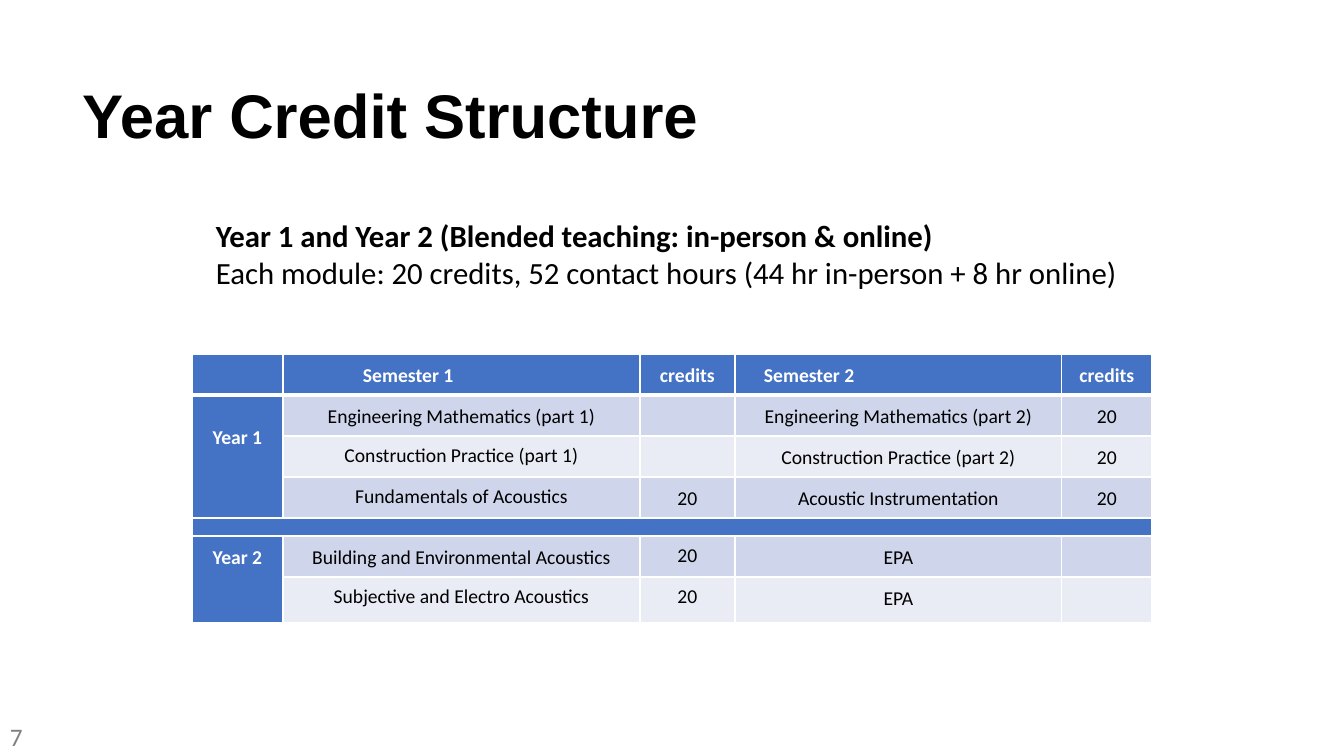
from dataclasses import dataclass

from lxml.etree import SubElement
from pptx import Presentation
from pptx.dml.color import RGBColor
from pptx.enum.text import MSO_ANCHOR as Anchor, PP_ALIGN as Align
from pptx.oxml import parse_xml
from pptx.oxml.ns import nsdecls, qn
from pptx.util import Pt


@dataclass(frozen=True)
class Theme:
    heading_font: str = "Arial"
    body_font: str = "Calibri"
    black: str = "000000"
    white: str = "FFFFFF"
    grey: str = "808080"
    blue: str = "4472C4"
    bands: tuple = ("CFD5EA", "E9EBF5")
    title_size: int = 44
    body_size: int = 22
    number_size: int = 18
    table_size: int = 14
    empty_size: int = 8


THEME = Theme()
COLUMN_WIDTHS = (91, 357, 95, 327, 90)
ROW_HEIGHTS = (41, 41, 41, 41, 18, 41, 46)
ROWS = (
    ("", "Semester 1", "credits", "Semester 2", "credits"),
    ("Year 1", "Engineering Mathematics (part 1)", "", "Engineering Mathematics (part 2)", "20"),
    ("", "Construction Practice (part 1)", "", "Construction Practice (part 2)", "20"),
    ("", "Fundamentals of Acoustics", "20", "Acoustic Instrumentation", "20"),
    ("", "", "", "", ""),
    ("Year 2", "Building and Environmental Acoustics", "20", "EPA", ""),
    ("", "Subjective and Electro Acoustics", "20", "EPA", ""),
)
MERGES = (((1, 0), (3, 0)), ((4, 0), (4, 4)), ((5, 0), (6, 0)))
SEPARATOR_ROW = 4
BAND_INDEX = {1: 0, 2: 1, 3: 0, 5: 0, 6: 1}
SINGLE_SPACED = {(2, 1), (3, 1), (5, 2), (6, 1), (6, 2)}
HEADER_INDENTS = {(0, 1): 80, (0, 3): 29}
YEAR_1_CELL = (1, 0)


def px(value):
    return round(value * 914400 / 100.8)


def box(left, top, width, height):
    return px(left), px(top), px(width), px(height)


def style_font(paragraph, size, color, bold=False, name=THEME.body_font):
    font = paragraph.font
    font.name = name
    font.size = Pt(size)
    font.bold = bold
    font.color.rgb = RGBColor.from_string(color)


def add_title(slide, text):
    title = slide.shapes.title
    title.left, title.top, title.width, title.height = box(72, 56, 907, 126)
    frame = title.text_frame
    frame.text = text
    frame.vertical_anchor = Anchor.MIDDLE
    paragraph = frame.paragraphs[0]
    paragraph.alignment = Align.LEFT
    paragraph.line_spacing = 0.9
    style_font(paragraph, THEME.title_size, THEME.black, True, THEME.heading_font)


def add_text(slide, bounds, lines, size, color):
    frame = slide.shapes.add_textbox(*box(*bounds)).text_frame
    frame.word_wrap = True
    for index, (text, bold) in enumerate(lines):
        paragraph = frame.add_paragraph() if index else frame.paragraphs[0]
        paragraph.text = text
        style_font(paragraph, size, color, bold)


def set_borders(cell, row):
    properties = cell._tc.get_or_add_tcPr()
    widths = {"lnL": 1, "lnR": 1, "lnT": 3 if row == 1 else 1, "lnB": 3 if row == 0 else 1}
    for index, (side, width) in enumerate(widths.items()):
        properties.insert(index, parse_xml(
            f'<a:{side} {nsdecls("a")} w="{Pt(width)}"><a:solidFill>'
            f'<a:srgbClr val="{THEME.white}"/></a:solidFill></a:{side}>'))


def fill_cell(cell, row, column, text):
    strong = row in (0, SEPARATOR_ROW) or column == 0
    cell.fill.solid()
    color = THEME.blue if strong else THEME.bands[BAND_INDEX[row]]
    cell.fill.fore_color.rgb = RGBColor.from_string(color)
    set_borders(cell, row)
    paragraph = cell.text_frame.paragraphs[0]
    if not text:
        cell.margin_top = cell.margin_bottom = 0
        SubElement(paragraph._p, qn("a:endParaRPr"), sz=str(THEME.empty_size * 100))
        return
    indent = HEADER_INDENTS.get((row, column))
    cell.margin_left = px(indent or 7)
    cell.margin_right = px(7)
    cell.margin_top = px(29 if (row, column) == YEAR_1_CELL else 8)
    cell.margin_bottom = px(7)
    paragraph.text = text
    paragraph.alignment = Align.LEFT if indent else Align.CENTER
    if (row, column) not in SINGLE_SPACED:
        paragraph.line_spacing = 1.07
    style_font(paragraph, THEME.table_size, THEME.white if strong else THEME.black, strong)


def add_credit_table(slide):
    bounds = box(192, 354, sum(COLUMN_WIDTHS), sum(ROW_HEIGHTS))
    table = slide.shapes.add_table(len(ROWS), len(COLUMN_WIDTHS), *bounds).table
    table.first_row = table.horz_banding = False
    for column, width in zip(table.columns, COLUMN_WIDTHS):
        column.width = px(width)
    for row, height in zip(table.rows, ROW_HEIGHTS):
        row.height = px(height)
    for row, texts in enumerate(ROWS):
        for column, text in enumerate(texts):
            fill_cell(table.cell(row, column), row, column, text)
    for first, last in MERGES:
        table.cell(*first).merge(table.cell(*last))


def main():
    presentation = Presentation()
    presentation.slide_width = px(1344)
    presentation.slide_height = px(756)
    slide = presentation.slides.add_slide(presentation.slide_layouts[5])
    add_title(slide, "Year Credit Structure")
    add_text(slide, (0, 716, 235, 40), [("7", False)], THEME.number_size, THEME.grey)
    add_text(slide, (206, 212, 933, 85), [
        ("Year 1 and Year 2 (Blended teaching: in-person & online)", True),
        ("Each module: 20 credits, 52 contact hours (44 hr in-person + 8 hr online)", False),
    ], THEME.body_size, THEME.black)
    add_credit_table(slide)
    presentation.save("out.pptx")


if __name__ == "__main__":
    main()
